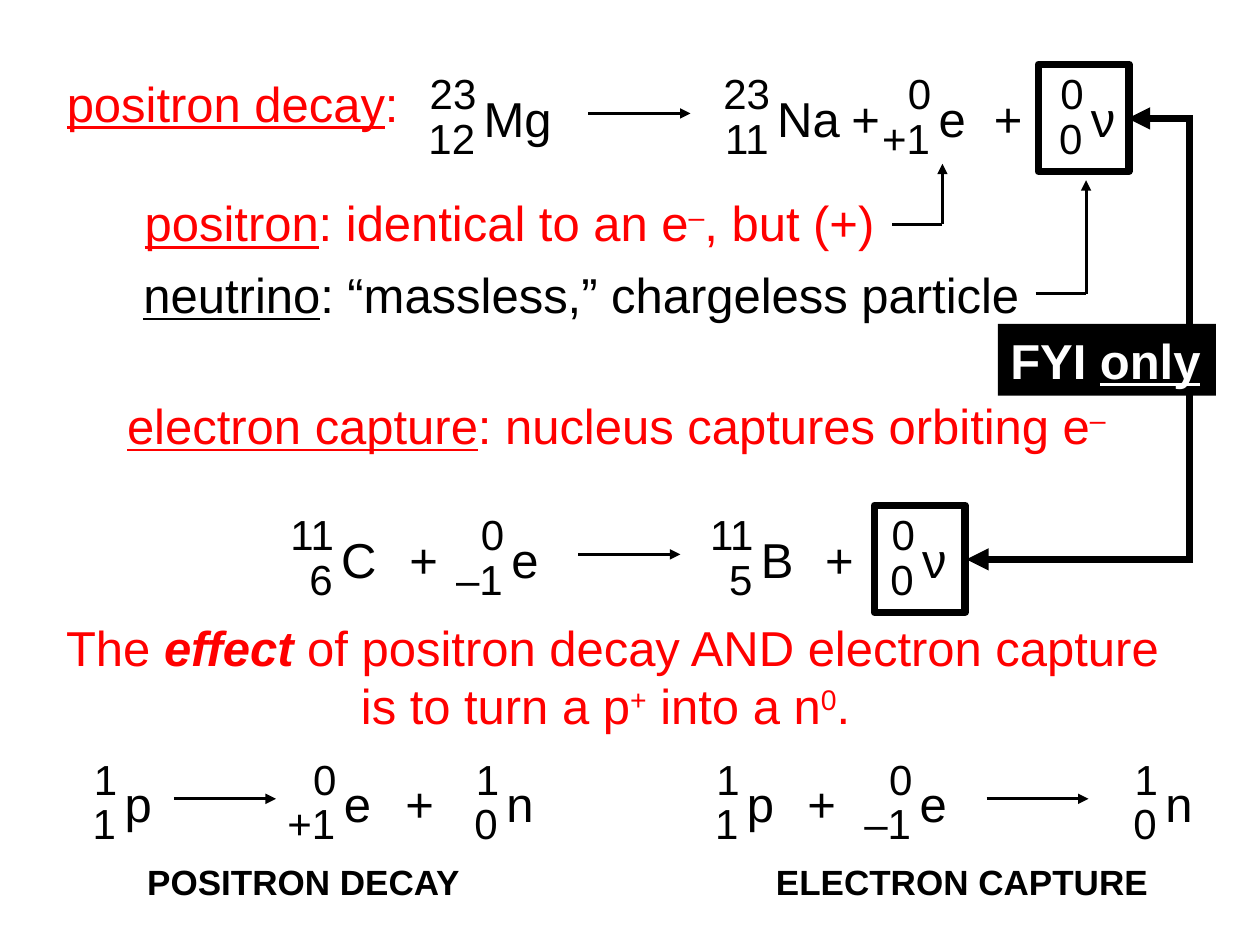
from pptx import Presentation
from pptx.dml.color import RGBColor
from pptx.enum.shapes import MSO_CONNECTOR, MSO_SHAPE
from pptx.enum.text import MSO_ANCHOR, MSO_AUTO_SIZE, PP_ALIGN
from pptx.oxml.ns import qn
from pptx.util import Inches, Pt
from lxml.etree import SubElement

BLACK, WHITE, RED = "000000", "FFFFFF", "FF0000"
THIN, THICK = 1.75, 4.25
SYMBOL_WIDTHS = {"Mg": 7.4, "Na": 7, "C": 4.8, "B": 4.6, "ν": 4, "+": 4.3}


def color(value):
    return RGBColor.from_string(value)


class DecaySlide:
    """Draws nuclear equations on a page ruled into 100 columns and 75 rows."""

    def __init__(self, deck):
        self.font = "Arial"
        self.unit = deck.slide_width / 100
        self.page = deck.slides.add_slide(deck.slide_layouts[5])

    def place(self, *lengths):
        return [round(length * self.unit) for length in lengths]

    def fill_text(self, box, paragraphs, size=28, ink=BLACK, align=PP_ALIGN.LEFT,
                  anchor=MSO_ANCHOR.MIDDLE, wrap=False):
        frame = box.text_frame
        frame.auto_size = MSO_AUTO_SIZE.NONE
        frame.word_wrap = wrap
        frame.vertical_anchor = anchor
        frame.margin_left = frame.margin_right = Inches(0.1)
        frame.margin_top = frame.margin_bottom = Inches(0.05)
        for index, spans in enumerate(paragraphs):
            para = frame.add_paragraph() if index else frame.paragraphs[0]
            para.alignment = align
            for words, marks in spans:
                span = para.add_run()
                span.text = words
                font = span.font
                font.name, font.size = self.font, Pt(size)
                font.color.rgb = color(ink)
                font.bold, font.italic = "b" in marks, "i" in marks
                font.underline = "u" in marks
                if "^" in marks:
                    span._r.get_or_add_rPr().set("baseline", "30000")

    def title(self, area, spans, **style):
        box = self.page.shapes.title
        box.left, box.top, box.width, box.height = self.place(*area)
        self.fill_text(box, [spans], **style)

    def text(self, area, *paragraphs, **style):
        box = self.page.shapes.add_textbox(*self.place(*area))
        self.fill_text(box, paragraphs, **style)

    def rectangle(self, area, fill=None, spans=None, **style):
        box = self.page.shapes.add_shape(MSO_SHAPE.RECTANGLE, *self.place(*area))
        box.shadow.inherit = False
        if fill:
            box.fill.solid()
            box.fill.fore_color.rgb = color(fill)
            box.line.fill.background()
        else:
            box.fill.background()
            box.line.color.rgb = color(BLACK)
            box.line.width = Pt(THICK)
        if spans:
            self.fill_text(box, [spans], **style)

    def line(self, start, end, width=THIN, arrow=False):
        link = self.page.shapes.add_connector(
            MSO_CONNECTOR.STRAIGHT, *self.place(*start, *end))
        link.line.color.rgb = color(BLACK)
        link.line.width = Pt(width)
        if arrow:
            SubElement(link.line._get_or_add_ln(), qn("a:tailEnd"), type="triangle")
        SubElement(link._element.spPr, qn("a:effectLst"))

    def symbol(self, left, top, words):
        area = (left, top + 1.6, SYMBOL_WIDTHS.get(words, 4.2), 5.7)
        self.text(area, [(words, "")], anchor=MSO_ANCHOR.TOP)

    def nuclide(self, left, top, words, mass, charge):
        for digits, right, drop in ((mass, 1.4, 0), (charge, 1.3, 3.5)):
            width = 2 + 1.85 * len(digits)
            self.text((left + right - width, top + drop, width, 5), [(digits, "")],
                      size=24, align=PP_ALIGN.RIGHT, anchor=MSO_ANCHOR.TOP)
        self.symbol(left, top, words)

    def equation(self, top, arrow, pluses, nuclides):
        for left, *labels in nuclides:
            self.nuclide(left, top, *labels)
        for left in pluses:
            self.symbol(left, top, "+")
        self.line((arrow, top + 4.1), (arrow + 8.1, top + 4.1), arrow=True)

    def pointer(self, start, corner, tip):
        self.line((start, corner[1]), corner)
        self.line(corner, (corner[0], tip), arrow=True)


def main():
    deck = Presentation()
    deck.slide_width, deck.slide_height = Inches(10), Inches(7.5)
    slide = DecaySlide(deck)

    slide.title((4.3, 5.3, 29.5, 5.7), [("positron decay", "u"), (":", "")], ink=RED)
    slide.equation(4.9, 46.7, (66.6, 77.9), (
        (37.4, "Mg", "23", "12"), (60.7, "Na", "23", "11"),
        (73.5, "e", "0", "+1"), (85.6, "ν", "0", "0")))

    slide.text((10.5, 14.8, 61.4, 5.7),
               [("positron", "u"), (": identical to an e", ""),
                ("–", "^"), (", but (+)", "")], ink=RED)
    slide.pointer(70.8, (74.8, 17.8), 13)
    slide.text((10.4, 20.5, 72.8, 5.7),
               [("neutrino", "u"), (": “massless,” chargeless particle", "")])
    slide.pointer(82.2, (86.2, 23.3), 14.3)

    slide.text((9.1, 30.9, 81.2, 5.7),
               [("electron capture", "u"),
                (": nucleus captures orbiting e", ""), ("–", "^")], ink=RED)
    slide.equation(39.9, 45.9, (31.5, 64.5), (
        (26.1, "C", "11", "6"), (39.6, "e", "0", "–1"),
        (59.4, "B", "11", "5"), (72.2, "ν", "0", "0")))

    slide.text((0.4, 48.5, 96.4, 10.3),
               [("The ", ""), ("effect", "bi"),
                (" of positron decay AND electron capture", "")],
               [("is to turn a p", ""), ("+", "^"), (" into a n", ""),
                ("0", "^"), (". ", "")],
               ink=RED, align=PP_ALIGN.CENTER, wrap=True)

    slide.equation(59.3, 13.8, (31.2,), (
        (8.9, "p", "1", "1"), (26.3, "e", "0", "+1"), (39.2, "n", "1", "0")))
    slide.equation(59.3, 78.3, (63.1,), (
        (58.3, "p", "1", "1"), (72, "e", "0", "–1"), (91.5, "n", "1", "0")))
    for left, width, label in ((10.7, 27, "POSITRON DECAY"),
                               (60.6, 31.6, "ELECTRON CAPTURE")):
        slide.text((left, 67.8, width, 4.3), [(label, "b")], size=20,
                   anchor=MSO_ANCHOR.TOP)

    for left, top in ((69.4, 40.1), (82.4, 5.1)):
        slide.rectangle((left, top, 7.2, 8.5))
    slide.rectangle((79.2, 25.7, 17.3, 5.7), BLACK,
                    [("FYI ", "b"), ("only", "bu")], ink=WHITE)
    for start, end in ((26.1, 9.1), (44.6, 31.3)):
        slide.line((94.4, start), (94.4, end), THICK)
    for start, end, row in ((94.7, 76.7, 44.4), (94.5, 89.5, 9.4)):
        slide.line((start, row), (end, row), THICK, arrow=True)

    deck.save("out.pptx")


if __name__ == "__main__":
    main()
